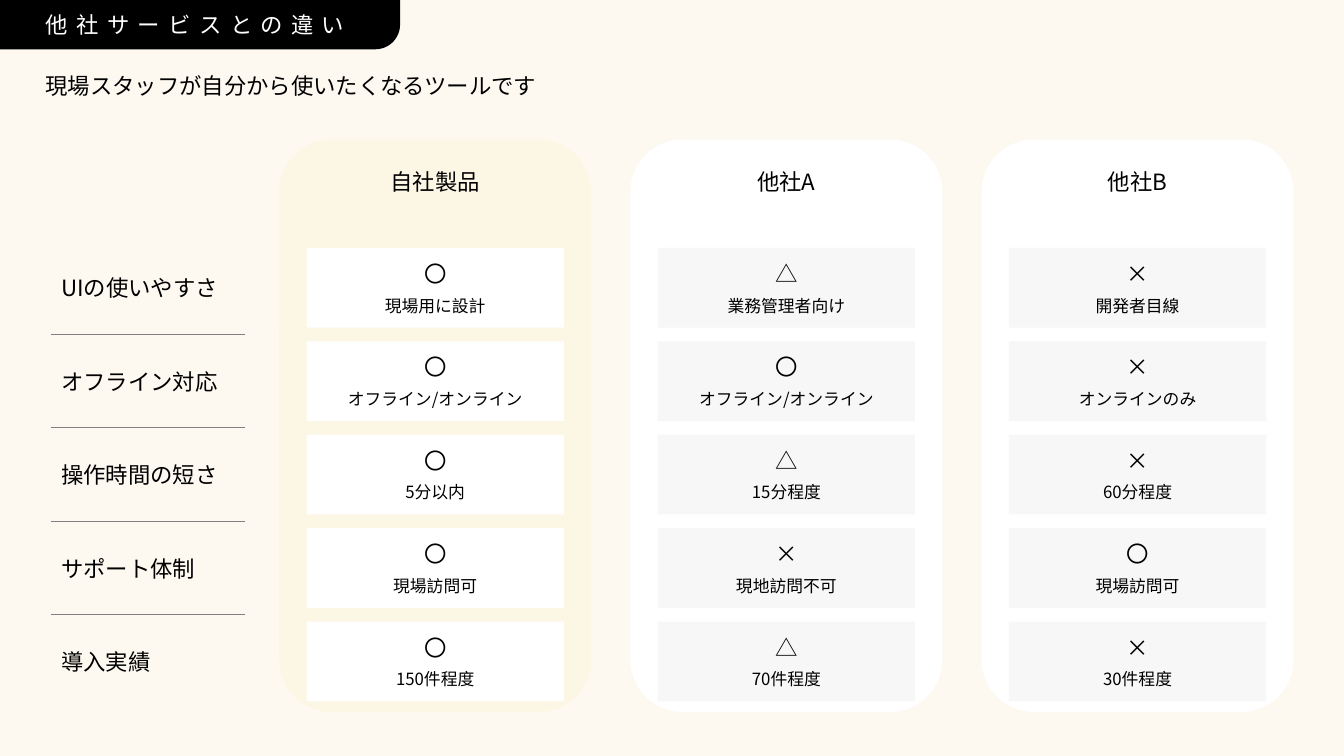
from pptx import Presentation
from pptx.dml.color import RGBColor
from pptx.enum.shapes import MSO_CONNECTOR, MSO_SHAPE
from pptx.enum.text import MSO_ANCHOR, MSO_AUTO_SIZE, PP_ALIGN
from pptx.oxml.ns import qn
from pptx.util import Pt
from lxml.etree import SubElement

PX = 9525
FONT = "Noto Sans CJK JP"
BLACK, WHITE, GREY = "000000", "FFFFFF", "808080"
CREAM, YELLOW, PALE = "FDF9F1", "FCF6E4", "F7F7F7"

ROW_TOP, ROW_HEIGHT, ROW_GAP = 103, 76, 13
PANEL_WIDTH = 297

CRITERIA = ["UIの使いやすさ", "オフライン対応", "操作時間の短さ", "サポート体制", "導入実績"]
SERVICES = [
    ("自社製品", YELLOW, WHITE, [
        ("〇", "現場用に設計"), ("〇", "オフライン/オンライン"), ("〇", "5分以内"),
        ("〇", "現場訪問可"), ("〇", "150件程度")]),
    ("他社A", WHITE, PALE, [
        ("△", "業務管理者向け"), ("〇", "オフライン/オンライン"), ("△", "15分程度"),
        ("×", "現地訪問不可"), ("△", "70件程度")]),
    ("他社B", WHITE, PALE, [
        ("×", "開発者目線"), ("×", "オンラインのみ"), ("×", "60分程度"),
        ("〇", "現場訪問可"), ("×", "30件程度")]),
]


def px(*lengths):
    return [round(length * PX) for length in lengths]


def rgb(code):
    return RGBColor.from_string(code)


def row_top(top, row):
    return top + ROW_TOP + row * (ROW_HEIGHT + ROW_GAP)


def write(shape, lines, sizes=(16,), color=BLACK, align=PP_ALIGN.LEFT, tracking=None):
    """Fill a shape with one paragraph per line, sized in turn."""
    frame = shape.text_frame
    frame.text = "\n".join(lines)
    frame.word_wrap = True
    frame.auto_size = MSO_AUTO_SIZE.NONE
    frame.vertical_anchor = MSO_ANCHOR.MIDDLE
    for para, size in zip(frame.paragraphs, sizes):
        para.alignment = align
        para.space_before = Pt(6)
        for span in para.runs:
            span.font.size = Pt(size)
            span.font.name = FONT
            span.font.color.rgb = rgb(color)
            props = span.font._element
            SubElement(props, qn("a:ea")).set("typeface", FONT)
            if tracking:
                props.set("spc", str(tracking * 100))


def add_block(shapes, kind, box, fill):
    block = shapes.add_shape(kind, *px(*box))
    block.shadow.inherit = False
    block.fill.solid()
    block.fill.fore_color.rgb = rgb(fill)
    block.line.fill.background()
    return block


def add_label(shapes, box, text, align=PP_ALIGN.LEFT):
    write(shapes.add_textbox(*px(*box)), [text], align=align)


def add_divider(shapes, left, top, width):
    line = shapes.add_connector(MSO_CONNECTOR.STRAIGHT, *px(left, top, left + width, top))
    line.line.color.rgb = rgb(GREY)
    line.line.width = Pt(0.5)
    SubElement(line._element.spPr, qn("a:effectLst"))


def add_heading(page, left, top, width, height):
    """Black tab with the slide title, rounded at its lower right corner."""
    tab = add_block(page.shapes, MSO_SHAPE.ROUND_1_RECTANGLE, (left, top, width, height), BLACK)
    tab.adjustments[0] = 0.5
    tab._element.spPr.find(qn("a:xfrm")).set("flipV", "1")
    title = page.shapes.title
    title.left, title.top, title.width, title.height = px(left + 34, top, width - 34, height)
    write(title, ["他社サービスとの違い"], color=WHITE, tracking=6)
    tab._element.addnext(title._element)


def add_criteria(page, left, top, width):
    group = page.shapes.add_group_shape().shapes
    for row, criterion in enumerate(CRITERIA):
        label_top = row_top(top, row)
        if row:
            add_divider(group, left, label_top - ROW_GAP / 2, width)
        add_label(group, (left, label_top, width, ROW_HEIGHT), criterion)


def add_service(page, left, top, width, height, service):
    name, panel_fill, cell_fill, ratings = service
    group = page.shapes.add_group_shape().shapes
    add_block(group, MSO_SHAPE.ROUNDED_RECTANGLE, (left, top, width, height), panel_fill)
    cell_left, cell_width = left + 26, width - 52
    for row, rating in enumerate(ratings):
        box = (cell_left, row_top(top, row), cell_width, ROW_HEIGHT)
        cell = add_block(group, MSO_SHAPE.RECTANGLE, box, cell_fill)
        write(cell, rating, sizes=(16, 12), align=PP_ALIGN.CENTER)
    add_label(group, (cell_left, top + 12, cell_width, 56), name, PP_ALIGN.CENTER)


def add_services(page, left, top, width, height):
    step = (width - PANEL_WIDTH) / (len(SERVICES) - 1)
    for column, service in enumerate(SERVICES):
        add_service(page, left + column * step, top, PANEL_WIDTH, height, service)


def main():
    deck = Presentation()
    deck.slide_width, deck.slide_height = px(1280, 720)
    page = deck.slides.add_slide(deck.slide_layouts[5])
    page.background.fill.solid()
    page.background.fill.fore_color.rgb = rgb(CREAM)
    add_label(page.shapes, (34, 60, 1202, 42), "現場スタッフが自分から使いたくなるツールです")
    add_heading(page, 0, 0, 381, 47)
    add_criteria(page, 49, 133, 184)
    add_services(page, 266, 133, 966, 545)
    deck.save("out.pptx")


if __name__ == "__main__":
    main()
